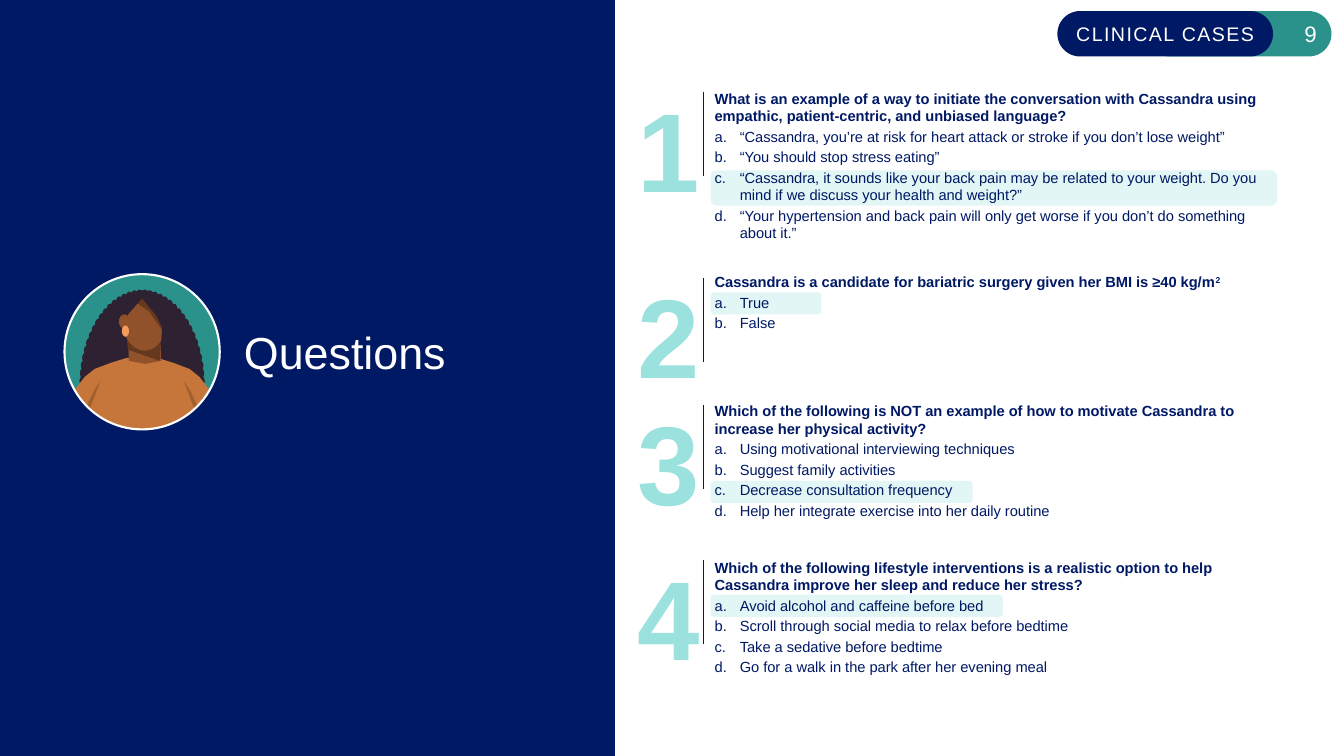
from math import cos, pi, radians, sin

from lxml.etree import SubElement
from pptx import Presentation
from pptx.dml.color import RGBColor
from pptx.enum.shapes import MSO_CONNECTOR as Connector, MSO_SHAPE as Shape
from pptx.enum.text import MSO_ANCHOR as Anchor, MSO_AUTO_SIZE as AutoSize, PP_ALIGN as Align
from pptx.oxml.ns import qn
from pptx.util import Emu, Inches, Pt

NAVY = RGBColor(0x00, 0x19, 0x65)
TEAL = RGBColor(0x2A, 0x91, 0x8B)
AQUA = RGBColor(0x9B, 0xE2, 0xDE)
PALE_AQUA = RGBColor(0xCD, 0xF0, 0xEE)
WHITE = RGBColor(0xFF, 0xFF, 0xFF)
HAIR = RGBColor(0x2E, 0x22, 0x32)
SKIN = RGBColor(0x91, 0x51, 0x2A)
SKIN_SHADE = RGBColor(0x66, 0x39, 0x1E)
SWEATER = RGBColor(0xC7, 0x76, 0x3B)
SWEATER_FOLD = RGBColor(0xA2, 0x60, 0x2E)
EARRING = RGBColor(0xF5, 0x9B, 0x5B)

COLUMNS, ROWS = 160, 90
CELL = Inches(1) // 12
AVATAR_LEFT, AVATAR_TOP, AVATAR_SIZE = 7.68, 32.64, 18.48
AVATAR_UNIT = 0.12  # columns in one avatar unit
AVATAR_MIDDLE = 77


def arc(center, radii, start, end, steps=24, ripples=0):
    """Points along an elliptical arc, with scallops if ripples are given."""
    points = []
    for step in range(steps + 1):
        share = step / steps
        angle = radians(start + (end - start) * share)
        swell = 1 + 0.02 * abs(sin(pi * ripples * share))
        points.append((center[0] + radii[0] * swell * cos(angle),
                       center[1] + radii[1] * swell * sin(angle)))
    return points


def mirror(points):
    return [(2 * AVATAR_MIDDLE - x, y) for x, y in reversed(points)]


class SlideBuilder:
    """Draws on one slide; lengths are columns and rows of a square grid."""

    font = "Arial"

    def __init__(self, slide):
        self.slide = slide

    def cells(self, *lengths):
        return [Emu(round(length * CELL)) for length in lengths]

    def style(self, paragraph, size, color, bold=False):
        for run in paragraph.runs:
            font = run.font
            font.name, font.size, font.bold = self.font, Pt(size), bold
            font.color.rgb = color

    def paint(self, shape, fill=None, line=None):
        shape.shadow.inherit = False
        if fill is None:
            shape.fill.background()
        else:
            shape.fill.solid()
            shape.fill.fore_color.rgb = fill
        if line is None:
            shape.line.fill.background()
        else:
            shape.line.color.rgb, shape.line.width = line, Pt(1.5)
        return shape

    def shape(self, kind, box, fill=None, line=None):
        return self.paint(self.slide.shapes.add_shape(kind, *self.cells(*box)), fill, line)

    def pill(self, box, fill, text, size, align, spacing=0):
        pill = self.shape(Shape.ROUNDED_RECTANGLE, box, fill)
        pill.adjustments[0] = 0.5
        frame = pill.text_frame
        frame.margin_left = frame.margin_right = Inches(0.08)
        frame.margin_top = frame.margin_bottom = Inches(0.04)
        frame.vertical_anchor = Anchor.MIDDLE
        frame.text = text
        paragraph = frame.paragraphs[0]
        paragraph.alignment = align
        self.style(paragraph, size, WHITE)
        paragraph.runs[0].font._element.set("spc", str(spacing))

    def highlight(self, top, width, height=2.64):
        shape = self.shape(Shape.ROUNDED_RECTANGLE, (84.6, top, width, height), PALE_AQUA)
        color = shape.fill._xPr.find(".//" + qn("a:srgbClr"))
        SubElement(color, qn("a:alpha")).set("val", "58000")

    def text(self, box, text, size, color, bold=False, wrap=True):
        frame = self.slide.shapes.add_textbox(*self.cells(*box)).text_frame
        frame.margin_left = frame.margin_right = frame.margin_top = frame.margin_bottom = 0
        frame.word_wrap = wrap
        frame.text = text
        self.style(frame.paragraphs[0], size, color, bold)
        return frame

    def rule(self, x, top, length):
        ends = self.cells(x, top, x, top + length)
        line = self.slide.shapes.add_connector(Connector.STRAIGHT, *ends)
        line.line.color.rgb, line.line.width = NAVY, Pt(1)
        SubElement(line._element.spPr, qn("a:effectLst"))

    def question(self, number, rule_top, text_top, height, prompt, answers, power=""):
        digit = self.text((75.84, rule_top - 4.56, 7.44, 17.64), str(number), 80, AQUA, True, wrap=False)
        digit.auto_size = AutoSize.SHAPE_TO_FIT_TEXT
        digit.paragraphs[0].line_spacing = 1.2
        self.rule(83.76, rule_top, 10)
        frame = self.text((85.08, text_top, 67.7, height), prompt, 10.5, NAVY, True)
        heading = frame.paragraphs[0]
        heading.space_after = Pt(2)
        if power:
            run = heading.add_run()
            run.text = power
            self.style(heading, 10.5, NAVY, True)
            run.font._element.set("baseline", "30000")
        for answer in answers:
            self.answer(frame.add_paragraph(), answer)

    def answer(self, paragraph, answer):
        paragraph.text = answer
        paragraph.space_after = Pt(2)
        properties = paragraph._p.get_or_add_pPr()
        properties.set("marL", str(Inches(0.25)))
        properties.set("indent", str(-Inches(0.25)))
        SubElement(properties, qn("a:buFont")).set("typeface", self.font)
        SubElement(properties, qn("a:buAutoNum")).set("type", "alphaLcPeriod")
        self.style(paragraph, 10.5, NAVY)

    def avatar_outline(self, color, points):
        first, *others = [self.cells(AVATAR_LEFT + x * AVATAR_UNIT, AVATAR_TOP + y * AVATAR_UNIT)
                          for x, y in points]
        builder = self.slide.shapes.build_freeform(*first)
        builder.add_line_segments(others, close=True)
        self.paint(builder.convert_to_shape(), color)

    def avatar(self):
        circle = (AVATAR_LEFT, AVATAR_TOP, AVATAR_SIZE, AVATAR_SIZE)
        self.shape(Shape.OVAL, circle, TEAL)
        # Hair, with scalloped edges
        scallops = arc((AVATAR_MIDDLE, 110), (61, 93), 180, 360, steps=144, ripples=36)
        self.avatar_outline(HAIR, scallops + [(134, 130), (20, 130)])
        # Sweater and neck
        shoulder = [(92, 83), (108, 88), (124, 94), (134, 102), (144, 115)]
        hem = arc((AVATAR_MIDDLE, AVATAR_MIDDLE), (77, 77), 35, 145)
        self.avatar_outline(SWEATER, shoulder + hem + mirror(shoulder))
        self.avatar_outline(SKIN, [(63, 65), (95, 65), (96, 86), (80, 89), (64, 86)])
        self.avatar_outline(SKIN_SHADE, [(62, 65), (95, 65), (95, 86), (63, 75)])
        # Face, its shade and the hair around it
        self.avatar_outline(SKIN, arc((79.5, 48), (21.5, 28), 0, 360))
        self.avatar_outline(SKIN_SHADE, [(71, 22), (93, 23), (100, 36), (98, 57), (84, 37), (71, 28)])
        parting = [(96, 65), (97, 53), (91, 41), (77, 24), (63, 40), (60, 55)]
        self.avatar_outline(HAIR, arc((78.5, 62), (33.5, 46), 190, 365) + parting)
        # Ear, earring and sweater folds
        self.avatar_outline(SKIN, arc((59.5, 47), (5.5, 7), 0, 360))
        self.avatar_outline(EARRING, arc((60.5, 56.5), (3.5, 5.5), 0, 360))
        fold = [(36, 105), (25, 134), (22, 131), (29, 116)]
        for points in (fold, mirror(fold)):
            self.avatar_outline(SWEATER_FOLD, points)
        self.shape(Shape.OVAL, circle, line=WHITE)


HIGHLIGHTS = [(70.8, 34.8), (57.24, 31.2), (34.8, 13.2), (20.28, 67.44, 4.2)]
QUESTIONS = [
    (10.92, 10.68, 20.76,
     "What is an example of a way to initiate the conversation with Cassandra using empathic, "
     "patient-centric, and unbiased language?",
     ["“Cassandra, you’re at risk for heart attack or stroke if you don’t lose weight”",
      "“You should stop stress eating”",
      "“Cassandra, it sounds like your back pain may be related to your weight. "
      "Do you mind if we discuss your health and weight?”",
      "“Your hypertension and back pain will only get worse if you don’t do something about it.”"]),
    (33.12, 32.52, 13.56,
     "Cassandra is a candidate for bariatric surgery given her BMI is ≥40 kg/m", ["True", "False"], "2"),
    (48.24, 47.88, 12.12,
     "Which of the following is NOT an example of how to motivate Cassandra to increase her physical activity?",
     ["Using motivational interviewing techniques", "Suggest family activities",
      "Decrease consultation frequency", "Help her integrate exercise into her daily routine"]),
    (66.72, 66.48, 12.12,
     "Which of the following lifestyle interventions is a realistic option to help Cassandra "
     "improve her sleep and reduce her stress?",
     ["Avoid alcohol and caffeine before bed", "Scroll through social media to relax before bedtime",
      "Take a sedative before bedtime", "Go for a walk in the park after her evening meal"]),
]


def main():
    presentation = Presentation()
    presentation.slide_width, presentation.slide_height = COLUMNS * CELL, ROWS * CELL
    builder = SlideBuilder(presentation.slides.add_slide(presentation.slide_layouts[6]))
    # Side panel and section tag
    builder.shape(Shape.RECTANGLE, (0, 0, 73.2, ROWS), NAVY)
    builder.pill((136.56, 1.32, 21.96, 5.4), TEAL, "9", 16, Align.RIGHT)
    builder.pill((125.88, 1.32, 25.68, 5.4), NAVY, "CLINICAL CASES", 14, Align.CENTER, spacing=100)
    # Correct answers, then the questions over them
    for highlight in HIGHLIGHTS:
        builder.highlight(*highlight)
    for number, question in enumerate(QUESTIONS, 1):
        builder.question(number, *question)
    # Title and avatar
    title = builder.text((29.04, 5.4, 35.4, 72.96), "Questions", 32, WHITE)
    title.vertical_anchor = Anchor.MIDDLE
    builder.avatar()
    presentation.save("out.pptx")


if __name__ == "__main__":
    main()
